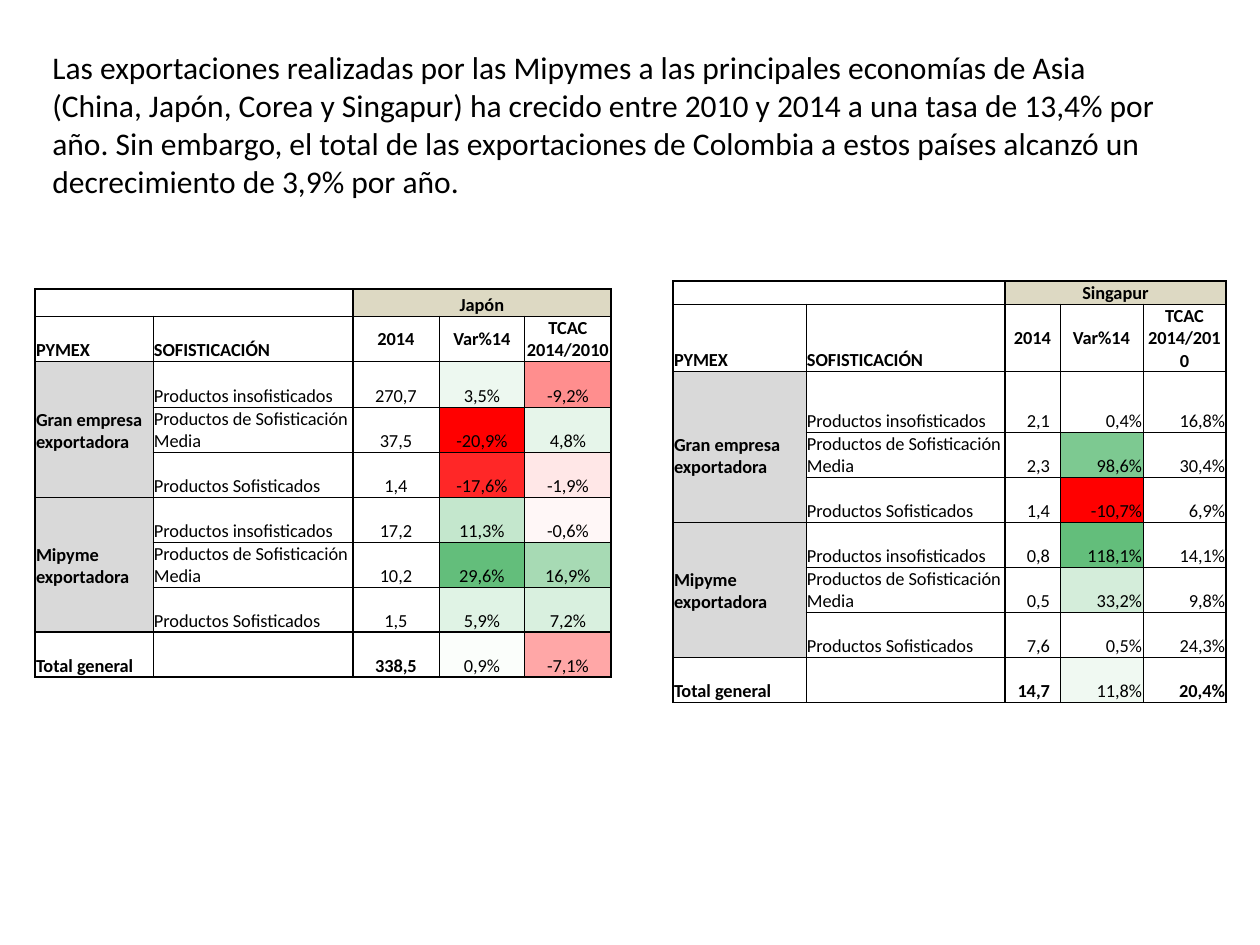
import pptx
import pptx.util
import pptx.dml.color
import pptx.enum.text
from lxml import etree

# Content
INTRO = ("Las exportaciones realizadas por las Mipymes a las principales economías de Asia "
         "(China, Japón, Corea y Singapur) ha crecido entre 2010 y 2014 a una tasa de 13,4% "
         "por año. Sin embargo, el total de las exportaciones de Colombia a estos países "
         "alcanzó un decrecimiento de 3,9% por año.")
HEADERS = ["PYMEX", "SOFISTICACIÓN", "2014", "Var%14", "TCAC 2014/2010"]
GROUPS = ["Gran empresa exportadora", "Mipyme exportadora"]
PRODUCTS = ["Productos insofisticados", "Productos de Sofisticación Media",
            "Productos Sofisticados"]
TOTAL = "Total general"

# Each data row: 2014, Var%14, TCAC; fills: Var%14, TCAC
TABLES = [
    dict(country="Japón", at=(35, 289), cols=[118, 200, 86, 86, 86],
         rows=[27, 44, 46] + [45] * 6, align="ccc", indent=1, bold_total="2014",
         data=[("270,7", "3,5%", "-9,2%"), ("37,5", "-20,9%", "4,8%"),
               ("1,4", "-17,6%", "-1,9%"), ("17,2", "11,3%", "-0,6%"),
               ("10,2", "29,6%", "16,9%"), ("1,5", "5,9%", "7,2%"),
               ("338,5", "0,9%", "-7,1%")],
         fills=[("EDF8F0", "FF8E8E"), ("FF0000", "E6F5EA"), ("FF2727", "FFE7E7"),
                ("C4E7CD", "FFF7F7"), ("63BE7B", "A7DAB4"), ("E0F3E5", "D9F0DF"),
                ("FBFEFB", "FFA7A7")]),
    dict(country="Singapur", at=(673, 281), cols=[133, 199, 55, 83, 83],
         rows=[23, 67, 61] + [45] * 6, align="rrr", indent=10,
         bold_total="2014 TCAC 2014/2010",
         data=[("2,1", "0,4%", "16,8%"), ("2,3", "98,6%", "30,4%"),
               ("1,4", "-10,7%", "6,9%"), ("0,8", "118,1%", "14,1%"),
               ("0,5", "33,2%", "9,8%"), ("7,6", "0,5%", "24,3%"),
               ("14,7", "11,8%", "20,4%")],
         fills=[("FFFFFF", None), ("7DC991", None), ("FF0000", None), ("63BE7B", None),
                ("D4EDDA", None), ("FFFFFF", None), ("F0F9F2", None)]),
]

THEME = dict(font="Calibri", ink="000000", country="DDD9C3", group="D9D9D9",
             intro=18, cell=10.5, thin=0.5, thick=1)

# Merged areas: first row, first column, last row, last column
MERGES = [(0, 0, 0, 1), (0, 2, 0, 4), (2, 0, 4, 0), (5, 0, 7, 0)]
THICK_X, THICK_Y = {0, 2, 5}, {0, 8, 9}
GROUP_BOTTOM = 44
ANCHOR = pptx.enum.text.MSO_ANCHOR
ALIGN = dict(l=pptx.enum.text.PP_ALIGN.LEFT, c=pptx.enum.text.PP_ALIGN.CENTER,
             r=pptx.enum.text.PP_ALIGN.RIGHT)


def px(n):
    return pptx.util.Emu(n * 914400 // 126)


def rgb(value):
    return pptx.dml.color.RGBColor.from_string(value)


def style(p, size, bold=False):
    for r in p.runs:
        r.font.name, r.font.size, r.font.bold = THEME["font"], pptx.util.Pt(size), bold
        r.font.color.rgb = rgb(THEME["ink"])


def set_borders(cell, row, col):
    top, left, bottom, right = next(
        (m for m in MERGES if m[0] <= row <= m[2] and m[1] <= col <= m[3]),
        (row, col, row, col))
    heavy = dict(L=left in THICK_X, R=right + 1 in THICK_X,
                 T=top in THICK_Y, B=bottom + 1 in THICK_Y)
    tc_pr = cell._tc.get_or_add_tcPr()
    for i, (side, thick) in enumerate(heavy.items()):
        width = pptx.util.Pt(THEME["thick" if thick else "thin"])
        ln = pptx.oxml.parse_xml(
            '<a:ln%s xmlns:a="http://schemas.openxmlformats.org/drawingml/2006/main" w="%d">'
            '<a:solidFill><a:srgbClr val="%s"/></a:solidFill></a:ln%s>'
            % (side, width, THEME["ink"], side))
        tc_pr.insert(i, ln)


def fill_cell(cell, text="", align="l", bold=False, fill=None, anchor=ANCHOR.BOTTOM,
              right=1, bottom=0):
    cell.margin_left, cell.margin_top = px(1), px(1)
    cell.margin_right, cell.margin_bottom = px(right), px(bottom)
    cell.vertical_anchor = anchor
    if fill:
        cell.fill.solid()
        cell.fill.fore_color.rgb = rgb(fill)
    else:
        cell.fill.background()
    p = cell.text_frame.paragraphs[0]
    if text:
        p.text = text
        p.alignment = ALIGN[align]
        style(p, THEME["cell"], bold)
    else:
        # Keeps an empty cell from growing its row
        p._p.get_or_add_endParaRPr().set("sz", str(int(THEME["cell"] * 100)))


def cell_content(t, row, col):
    """Return the fill_cell arguments for one grid position."""
    if row == 0:
        return dict(text=t["country"], align="c", bold=True,
                    fill=THEME["country"]) if col == 2 else {}
    if row == 1:
        value = col >= 2
        return dict(text=HEADERS[col], bold=True, align="c" if value else "l",
                    anchor=ANCHOR.MIDDLE if value else ANCHOR.BOTTOM)
    i, total = row - 2, row == 8
    if col == 0:
        if total:
            return dict(text=TOTAL, bold=True)
        return dict(text=GROUPS[i // 3] if i % 3 == 0 else "", bold=True,
                    fill=THEME["group"], bottom=GROUP_BOTTOM if i % 3 == 0 else 0)
    if col == 1:
        return {} if total else dict(text=PRODUCTS[i % 3])
    return dict(text=t["data"][i][col - 2], align=t["align"][col - 2],
                bold=total and HEADERS[col] in t["bold_total"],
                fill=t["fills"][i][col - 3] if col > 2 else None,
                right=t["indent"] if col == 2 else 1)


def add_country_table(s, t):
    sizes = sum(t["cols"]), sum(t["rows"])
    tb = s.shapes.add_table(len(t["rows"]), len(t["cols"]),
                            *map(px, t["at"] + sizes)).table
    tb.first_row = tb.horz_banding = False
    for col, width in enumerate(t["cols"]):
        tb.columns[col].width = px(width)
    for row, height in enumerate(t["rows"]):
        tb.rows[row].height = px(height)
        for col in range(len(t["cols"])):
            cell = tb.cell(row, col)
            fill_cell(cell, **cell_content(t, row, col))
            set_borders(cell, row, col)
    for top, left, bottom, right in MERGES:
        tb.cell(top, left).merge(tb.cell(bottom, right))


def main():
    prs = pptx.Presentation()
    prs.slide_width, prs.slide_height = px(1260), px(945)
    s = prs.slides.add_slide(prs.slide_layouts[6])

    # Introduction
    tf = s.shapes.add_textbox(px(40), px(42), px(1139), px(165)).text_frame
    tf.word_wrap = True
    tf.auto_size = pptx.enum.text.MSO_AUTO_SIZE.SHAPE_TO_FIT_TEXT
    tf.text = INTRO
    style(tf.paragraphs[0], THEME["intro"])

    # Country tables
    for t in TABLES:
        add_country_table(s, t)
    prs.save("out.pptx")


if __name__ == "__main__":
    main()
